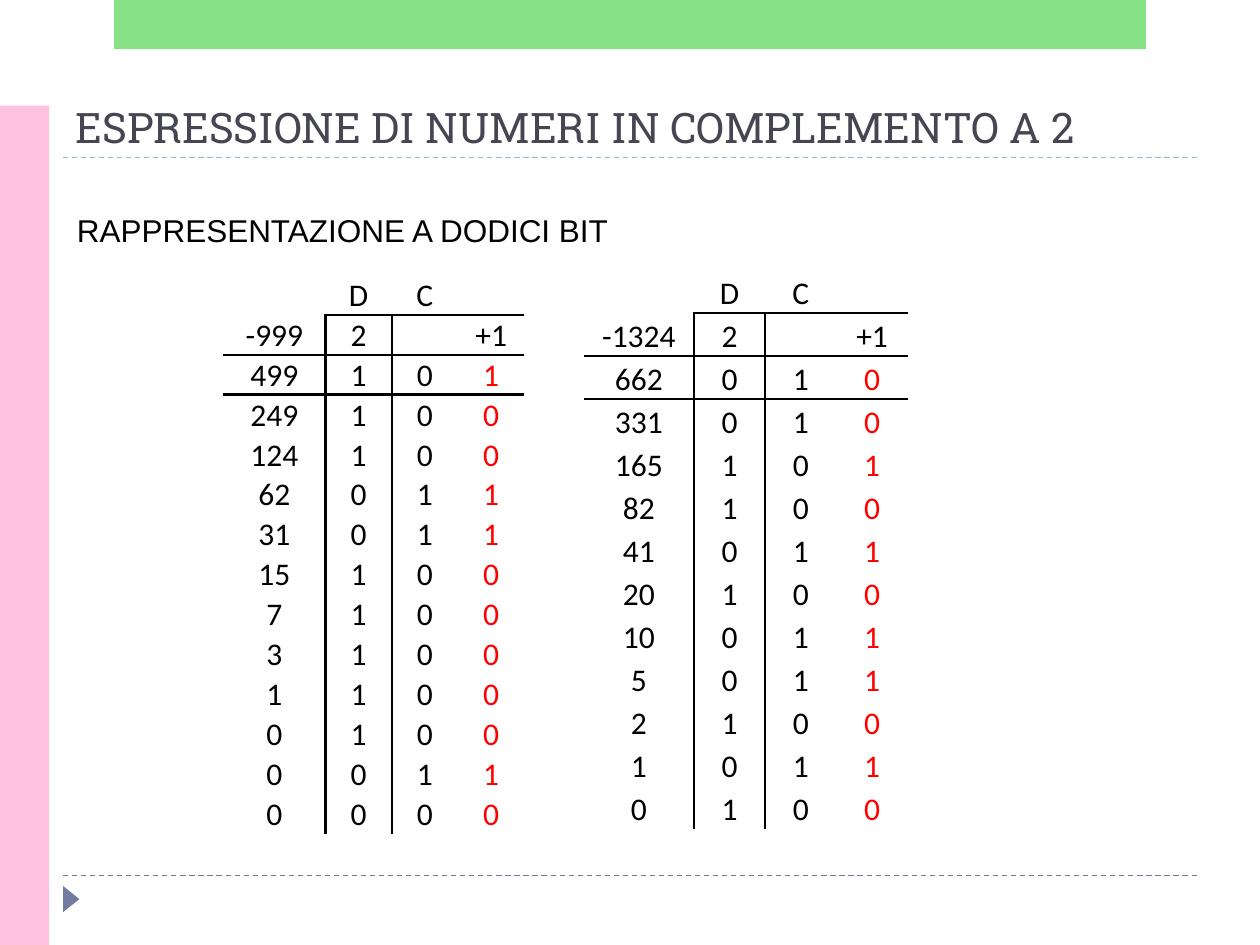
import pptx
import pptx.util
import pptx.dml.color
import pptx.enum.dml
import pptx.enum.shapes
import pptx.enum.text
import pptx.oxml
import pptx.oxml.ns

Cm, Pt = pptx.util.Cm, pptx.util.Pt
SHAPE = pptx.enum.shapes.MSO_SHAPE
ANCHOR = pptx.enum.text.MSO_ANCHOR
ALIGN = pptx.enum.text.PP_ALIGN
NS = pptx.oxml.ns.nsdecls("a")
PLAIN_TABLE_STYLE = "{2D5ABB26-0587-4C30-8999-92F81FD0307C}"

TITLE_FORMAT = {"name": "Roboto Slab", "size": Pt(24), "bold": False}
SUBTITLE_FORMAT = {"name": "Arial", "size": Pt(18)}
CELL_FORMAT = {"name": "Calibri", "size": Pt(18)}
CELL_LAYOUT = {"margin_left": Cm(0.03), "margin_right": Cm(0.03),
               "margin_top": Cm(0.03), "margin_bottom": 0,
               "vertical_anchor": ANCHOR.BOTTOM}

# Successive quotients, then the digits of columns D, C and +1
MINUS_999 = ("-999", [499, 249, 124, 62, 31, 15, 7, 3, 1, 0, 0, 0],
             "111001111100", "000110000010", "100110000010")
MINUS_1324 = ("-1324", [662, 331, 165, 82, 41, 20, 10, 5, 2, 1, 0],
              "00110100101", "11001011010", "00101011010")


def rgb(color):
    return pptx.dml.color.RGBColor.from_string(color)


def lengths(box):
    return [Cm(value) for value in box]


def apply(target, values):
    for attribute, value in values.items():
        setattr(target, attribute, value)


def write(paragraph, text, values, color, alignment=ALIGN.LEFT):
    paragraph.alignment = alignment
    run = paragraph.add_run()
    run.text = text
    apply(run.font, values)
    run.font.color.rgb = rgb(color)


def add_block(slide, preset, box, color, rotation=0, opacity=100):
    block = slide.shapes.add_shape(preset, *lengths(box))
    block.shadow.inherit = False
    block.rotation = rotation
    block.fill.solid()
    block.fill.fore_color.rgb = rgb(color)
    block.line.fill.background()
    if opacity < 100:
        block.fill._xPr.find(".//" + pptx.oxml.ns.qn("a:srgbClr")).append(
            pptx.oxml.parse_xml(f'<a:alpha {NS} val="{opacity * 1000}"/>'))


def add_dashed_rule(slide, left, top, width, color):
    rule = slide.shapes.add_connector(
        pptx.enum.shapes.MSO_CONNECTOR.STRAIGHT,
        *lengths((left, top, left + width, top)))
    rule.line.color.rgb = rgb(color)
    rule.line.width = Pt(0.75)
    rule.line.dash_style = pptx.enum.dml.MSO_LINE.DASH
    rule._element.spPr.append(pptx.oxml.parse_xml(f"<a:effectLst {NS}/>"))


def add_decoration(slide, left, width):
    # Footer and title rules, page marker, side and top bands
    add_dashed_rule(slide, left, 17.65, width, "727CA3")
    add_dashed_rule(slide, left, 3.17, width, "9FB8CD")
    add_block(slide, SHAPE.ISOSCELES_TRIANGLE,
              (left - 0.1, 17.96, 0.53, 0.33), "727CA3", rotation=90)
    add_block(slide, SHAPE.RECTANGLE, (0, 2.13, 0.99, 16.92), "FFC1E0")
    add_block(slide, SHAPE.RECTANGLE, (2.3, 0, 20.8, 0.99), "62D862", opacity=76)


def add_headings(slide, left, top, width):
    title = slide.shapes.title
    apply(title, dict(zip(("left", "top", "width", "height"),
                          lengths((left, top, width, 1.78)))))
    title.text_frame.vertical_anchor = ANCHOR.BOTTOM
    write(title.text_frame.paragraphs[0],
          "ESPRESSIONE DI NUMERI IN COMPLEMENTO A 2", TITLE_FORMAT, "464653")

    subtitle = slide.shapes.add_textbox(
        *lengths((left + 0.03, top + 2.72, 11.33, 1.02)))
    subtitle.text_frame.word_wrap = False
    write(subtitle.text_frame.paragraphs[0],
          "RAPPRESENTAZIONE A DODICI BIT", SUBTITLE_FORMAT, "000000")


def add_borders(cell, sides):
    properties = cell._tc.get_or_add_tcPr()
    for side in sides:
        properties.append(pptx.oxml.parse_xml(
            f'<a:ln{side} {NS} w="{Pt(1.5)}"><a:solidFill>'
            f'<a:srgbClr val="000000"/></a:solidFill></a:ln{side}>'))


def border_sides(row, column):
    """Rules of the division layout, in the order L, R, T, B."""
    sides = ""
    if row >= 1 and column <= 1:
        sides += "RL"[column]
    if row == 2 or (row == 1 and column >= 1):
        sides += "T"
    if row == 1 or (row == 0 and column >= 1):
        sides += "B"
    return sides


def add_division_table(slide, box, number, quotients, *digits):
    rows = [("", "D", "C", ""), (number, "2", "", "+1"),
            *zip(map(str, quotients), *digits)]
    frame = slide.shapes.add_table(len(rows), 4, *lengths(box))
    table = frame.table
    apply(table, {"first_row": False, "horz_banding": False})
    table._tbl.tblPr.find(pptx.oxml.ns.qn("a:tableStyleId")).text = PLAIN_TABLE_STYLE

    # The quotient column takes 34% of the width, the others share the rest
    width, height = box[2:]
    for column, share in enumerate((0.34, 0.22, 0.22, 0.22)):
        table.columns[column].width = Cm(width * share)
    for row, texts in enumerate(rows):
        table.rows[row].height = Cm(height / len(rows))
        for column, text in enumerate(texts):
            cell = table.cell(row, column)
            apply(cell, CELL_LAYOUT)
            add_borders(cell, border_sides(row, column))
            cell.fill.background()
            if text:
                color = "FF0000" if row >= 2 and column == 3 else "000000"
                write(cell.text_frame.paragraphs[0], text, CELL_FORMAT, color,
                      ALIGN.CENTER)


def main():
    deck = pptx.Presentation()
    apply(deck, {"slide_width": Cm(25.4), "slide_height": Cm(19.05)})
    slide = deck.slides.add_slide(deck.slide_layouts.get_by_name("Title Only"))
    add_decoration(slide, 1.27, 22.86)
    add_headings(slide, 1.27, 1.4, 22.86)
    add_division_table(slide, (4.5, 5.54, 6.07, 11.28), *MINUS_999)
    add_division_table(slide, (11.77, 5.44, 6.53, 11.28), *MINUS_1324)
    deck.save("out.pptx")


if __name__ == "__main__":
    main()
